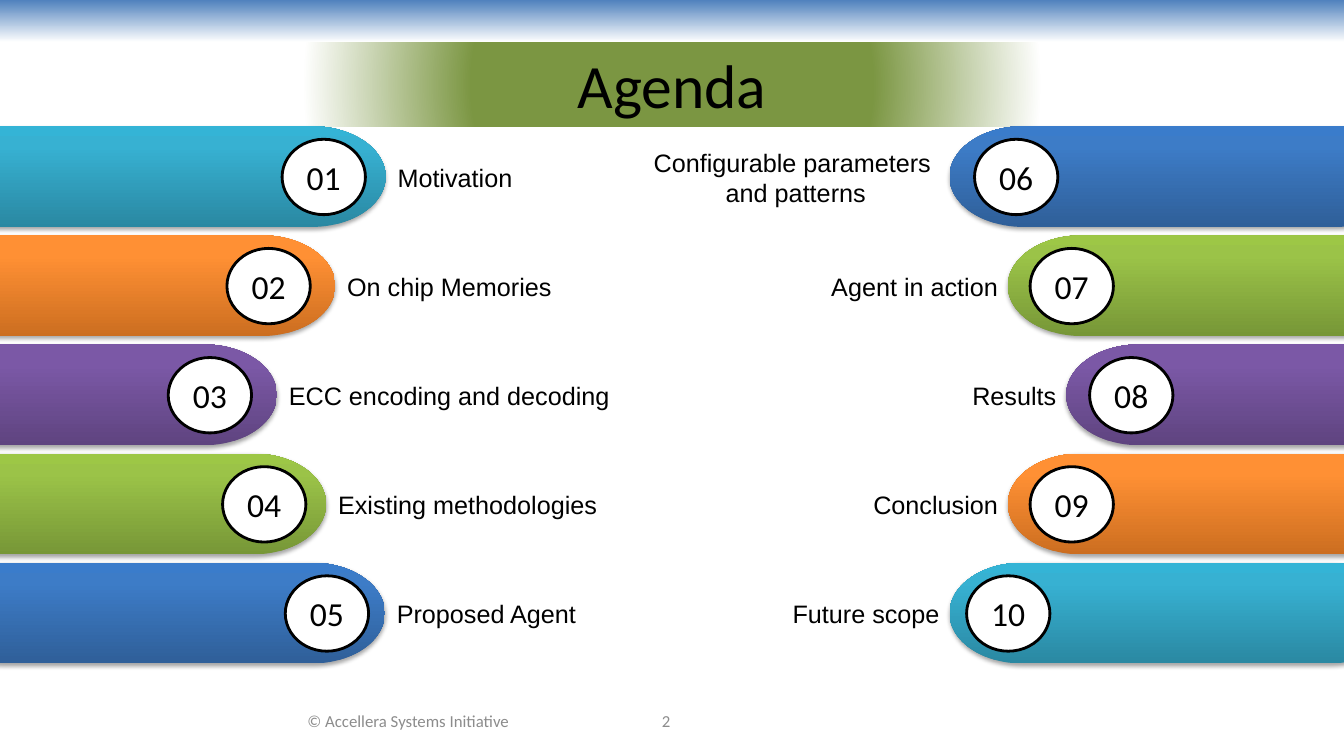
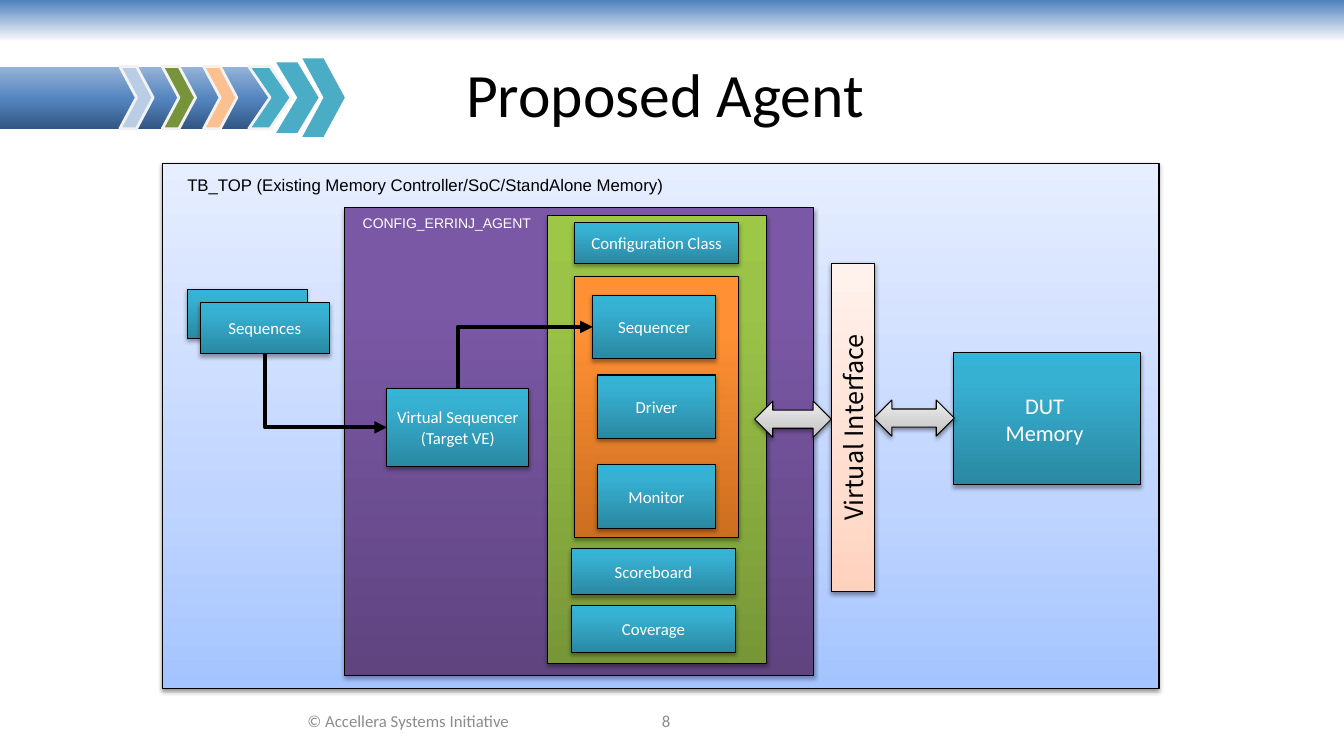
from pptx import Presentation
from pptx.dml.color import RGBColor
from pptx.enum.shapes import MSO_CONNECTOR, MSO_SHAPE
from pptx.enum.text import MSO_ANCHOR, PP_ALIGN
from pptx.oxml import parse_xml
from pptx.oxml.ns import nsdecls, qn
from pptx.util import Cm, Pt

RECTANGLE = MSO_SHAPE.RECTANGLE
TERMINATOR = MSO_SHAPE.FLOWCHART_TERMINATOR
OVAL = MSO_SHAPE.OVAL
CHEVRON = MSO_SHAPE.CHEVRON
DOUBLE_ARROW = MSO_SHAPE.LEFT_RIGHT_ARROW
ELBOW = MSO_CONNECTOR.ELBOW
LEFT, CENTER, RIGHT = PP_ALIGN.LEFT, PP_ALIGN.CENTER, PP_ALIGN.RIGHT
TOP, MIDDLE = MSO_ANCHOR.TOP, MSO_ANCHOR.MIDDLE


class Theme:
    # Plain colours
    black, white, grey = "000000", "FFFFFF", "8C8C8C"
    chevron_edge, teal = "F2F2F2", "4BACC6"
    pale_blue, olive, peach = "B9CDE5", "77933C", "FAC090"
    # Gradients: (position in percent, colour)
    band = [(0, "4F81BD"), (100, "FFFFFF")]
    title_glow = [(33, "7B9642"), (61, "FFFFFF"), (97, "FFFFFF")]
    cyan = [(0, "2A88A2"), (80, "37B1D2"), (100, "34B4D6")]
    orange = [(0, "CC6E20"), (80, "FF9034"), (100, "FF9136")]
    purple = [(0, "5F4480"), (80, "7B58A6"), (100, "7C57A8")]
    green = [(0, "779737"), (80, "9BC348"), (100, "9DC746")]
    blue = [(0, "2F5F99"), (80, "3D7CC7"), (100, "3A7CCB")]
    panel = [(0, "A4C4FF"), (35, "BFD4FF"), (100, "E6EEFF")]
    silver = [(0, "BDBDBD"), (35, "D1D1D1"), (100, "EEEEEE")]
    salmon = [(0, "FFD2BD"), (35, "FFDED0"), (100, "FFF2ED")]
    banner = [(0, "315683"), (48, "5485BF"), (100, "95B3D7")]
    # Shadows: (opacity in percent, distance in points)
    strong_shadow, soft_shadow = (35, 1.8), (38, 1.6)
    # Fonts and type sizes
    heading_font, label_font, interface_font = "Calibri", "Arial", "Noto Sans CJK KR"
    title, number, label, memory, body, small = 44, 24, 18, 16, 12, 10


def add_block(slide, kind, box, fill, line=None, line_width=0.75, shadow=None, angle=270):
    """Add a preset shape; box is in centimetres, an angle of None fills radially."""
    shape = slide.shapes.add_shape(kind, *map(Cm, box))
    properties = shape._element.spPr
    shape.fill.solid()
    if isinstance(fill, str):
        shape.fill.fore_color.rgb = RGBColor.from_string(fill)
    else:
        stops = "".join(
            f'<a:gs pos="{position * 1000}"><a:srgbClr val="{color}"/></a:gs>'
            for position, color in fill)
        if angle is None:
            direction = ('<a:path path="circle"><a:fillToRect l="50000" t="50000" '
                         'r="50000" b="50000"/></a:path>')
        else:
            direction = f'<a:lin ang="{angle * 60000}" scaled="0"/>'
        gradient = parse_xml(f'<a:gradFill {nsdecls("a")} rotWithShape="1">'
                             f'<a:gsLst>{stops}</a:gsLst>{direction}</a:gradFill>')
        properties.replace(properties.find(qn("a:solidFill")), gradient)
    if line:
        shape.line.color.rgb = RGBColor.from_string(line)
        shape.line.width = Pt(line_width)
    else:
        shape.line.fill.background()
    shape.shadow.inherit = False
    if shadow:
        opacity, distance = shadow
        properties.find(qn("a:effectLst")).append(parse_xml(
            f'<a:outerShdw {nsdecls("a")} blurRad="{Pt(3.1)}" dist="{Pt(distance)}" '
            f'dir="5400000" rotWithShape="0"><a:srgbClr val="{Theme.black}">'
            f'<a:alpha val="{opacity * 1000}"/></a:srgbClr></a:outerShdw>'))
    frame = shape.text_frame
    frame.margin_left = frame.margin_right = frame.margin_top = frame.margin_bottom = 0
    return shape


def add_text(shape, text, *, size=Theme.body, font=Theme.heading_font, color=Theme.black,
             align=CENTER, anchor=MIDDLE, wrap=True):
    frame = shape.text_frame
    frame.word_wrap = wrap
    frame.vertical_anchor = anchor
    frame.text = text
    for paragraph in frame.paragraphs:
        paragraph.alignment = align
        paragraph.font.size = Pt(size)
        paragraph.font.name = font
        paragraph.font.color.rgb = RGBColor.from_string(color)


presentation = Presentation()
presentation.slide_width, presentation.slide_height = Cm(33.87), Cm(19.05)
blank_layout = presentation.slide_layouts[6]

# Band, title and footer of both slides
pages = [
    ("Agenda", "2", (1.7, 1.07, 30.48, 2.11), Theme.title_glow),
    ("Proposed Agent ", "8", (1.7, 0.76, 30.48, 3.18), None),
]
slides = []
for title, page_number, title_box, title_fill in pages:
    slide = presentation.slides.add_slide(blank_layout)
    slides.append(slide)
    add_block(slide, RECTANGLE, (0, 0, 33.87, 1.07), Theme.band, angle=90)
    if title_fill:
        title_shape = add_block(slide, RECTANGLE, title_box, title_fill, angle=None)
    else:
        title_shape = slide.shapes.add_textbox(*map(Cm, title_box))
    add_text(title_shape, title, size=Theme.title)
    for text, left, width in [("© Accellera Systems Initiative", 6.2, 8.18),
                              (page_number, 13.54, 6.5)]:
        footer = slide.shapes.add_textbox(Cm(left), Cm(17.65), Cm(width), Cm(1.02))
        add_text(footer, text, color=Theme.grey)

agenda, agent = slides

# Agenda: bar left and width, circle left, label and label width
row_colors = [Theme.cyan, Theme.orange, Theme.purple, Theme.green, Theme.blue]
left_items = [
    (-1.88, 11.6, 7.11, "Motivation", 3.43),
    (-3.15, 11.6, 5.72, "On chip Memories", 5.72),
    (-4.42, 11.4, 4.24, "ECC encoding and decoding", 8.66),
    (-3.18, 11.4, 5.61, "Existing methodologies", 7.11),
    (-1.7, 11.4, 7.19, "Proposed Agent", 5.26),
]
right_items = [
    (23.93, 11.6, 24.56, "Configurable parameters \vand patterns", 7.75),
    (25.4, 11.6, 25.96, "Agent in action", 4.93),
    (26.87, 11.4, 27.46, "Results", 2.64),
    (25.4, 11.4, 25.96, "Conclusion", 3.68),
    (23.93, 11.4, 24.36, "Future scope", 4.24),
]
sides = [(left_items, row_colors, 1), (right_items, row_colors[::-1], 6)]
for items, colors, first_number in sides:
    for row, (bar_left, bar_width, circle_left, label, label_width) in enumerate(items):
        row_top = 3.18 + 2.75 * row
        add_block(agenda, TERMINATOR, (bar_left, row_top, bar_width, 2.54), colors[row],
                  shadow=Theme.strong_shadow)
        circle = add_block(agenda, OVAL, (circle_left, row_top + 0.33, 2.1, 1.9),
                           Theme.white, line=Theme.black, line_width=2)
        add_text(circle, f"{first_number + row:02d}", size=Theme.number)

        # Labels touch the round end of their bar
        two_lines = "\v" in label
        label_height = 1.8 if two_lines else 1.02
        if items is left_items:
            label_left, align = bar_left + bar_width + 0.05, LEFT
        else:
            label_left, align = bar_left - label_width, CENTER if two_lines else RIGHT
        label_box = agenda.shapes.add_textbox(
            Cm(label_left), Cm(row_top + 1.29 - label_height / 2),
            Cm(label_width), Cm(label_height))
        add_text(label_box, label, size=Theme.label, font=Theme.label_font,
                 align=align, wrap=False)

# Proposed agent: nested containers and their blocks, from back to front
blocks = [
    ("", (4.09, 4.11, 25.12, 13.23), Theme.panel),
    ("", (8.69, 5.23, 11.81, 11.79), Theme.purple),
    ("", (4.72, 7.29, 3.02, 1.24), Theme.cyan),
    ("Sequences", (5.05, 7.62, 3.25, 1.3), Theme.cyan),
    ("", (13.79, 5.44, 5.54, 11.28), Theme.green),
    ("Configuration Class", (14.48, 5.61, 4.14, 1.02), Theme.cyan),
    ("", (14.48, 6.96, 4.14, 6.58), Theme.orange),
    ("Sequencer", (14.94, 7.44, 3.1, 1.6), Theme.cyan),
    ("Driver", (15.06, 9.45, 2.97, 1.6), Theme.cyan),
    ("Monitor", (15.06, 11.71, 2.97, 1.6), Theme.cyan),
    ("Scoreboard", (14.4, 13.82, 4.14, 1.17), Theme.cyan),
    ("Coverage", (14.4, 15.27, 4.14, 1.17), Theme.cyan),
    ("Virtual Sequencer (Target VE)", (9.75, 9.78, 3.58, 1.98), Theme.cyan),
    ("DUT \nMemory ", (24.03, 8.89, 4.72, 3.33), Theme.cyan),
]
named_blocks = {}
for text, box, fill in blocks:
    shadow = Theme.soft_shadow if fill is Theme.panel else Theme.strong_shadow
    block = add_block(agent, RECTANGLE, box, fill, line=Theme.black, shadow=shadow)
    if text:
        size = Theme.memory if text.startswith("DUT") else Theme.body
        add_text(block, text, size=size, color=Theme.white)
        named_blocks[text.split()[0]] = block

# Container captions
captions = [
    ("CONFIG_ERRINJ_AGENT", (8.43, 5.28, 5.66, 0.69), Theme.small, Theme.white, CENTER),
    ("TB_TOP (Existing Memory Controller/SoC/StandAlone Memory)",
     (4.47, 4.29, 23.88, 0.76), Theme.body, Theme.black, LEFT),
]
for text, box, size, color, align in captions:
    caption = agent.shapes.add_textbox(*map(Cm, box))
    add_text(caption, text, size=size, font=Theme.label_font, color=color,
             align=align, anchor=TOP)

# Virtual interface and its double arrows
for box in [(19.02, 10.11, 1.93, 0.91), (22.02, 10.08, 2.03, 0.91)]:
    add_block(agent, DOUBLE_ARROW, box, Theme.silver, line=Theme.black,
              shadow=Theme.soft_shadow)
interface = add_block(agent, RECTANGLE, (20.96, 6.63, 1.09, 8.28), Theme.salmon,
                      line=Theme.black, shadow=Theme.soft_shadow)
add_text(interface, "Virtual Interface", size=Theme.label, font=Theme.interface_font)
interface.text_frame._txBody.bodyPr.set("vert", "vert270")

# Bent arrows: one vertical leg, then one horizontal leg
bent_arrows = [
    ("Sequences", 2, "Virtual", {"rot": "16200000", "flipH": "1"}),
    ("Virtual", 0, "Sequencer", {"rot": "5400000", "flipH": "1", "flipV": "1"}),
]
for source, source_side, target, turn in bent_arrows:
    connector = agent.shapes.add_connector(ELBOW, 0, 0, 0, 0)
    connector.begin_connect(named_blocks[source], source_side)
    connector.end_connect(named_blocks[target], 1)
    across = abs(connector.end_x - connector.begin_x)
    down = abs(connector.end_y - connector.begin_y)
    center_x = (connector.begin_x + connector.end_x) // 2
    center_y = (connector.begin_y + connector.end_y) // 2
    connector.left, connector.top = center_x - down // 2, center_y - across // 2
    connector.width, connector.height = down, across
    properties = connector._element.spPr
    transform = properties.find(qn("a:xfrm"))
    for flip in ("flipH", "flipV"):
        transform.attrib.pop(flip, None)
    for name, value in turn.items():
        transform.set(name, value)
    properties.find(qn("a:prstGeom")).set("prst", "bentConnector2")
    connector.line.color.rgb = RGBColor.from_string(Theme.black)
    connector.line.width = Pt(3)
    properties.find(qn("a:ln")).append(
        parse_xml(f'<a:tailEnd {nsdecls("a")} type="triangle"/>'))
    properties.append(parse_xml(f'<a:effectLst {nsdecls("a")}/>'))

# Chevron banner beside the title, centred on one line
add_block(agent, RECTANGLE, (-2.69, 1.68, 9.53, 1.57), Theme.banner)
chevrons = [
    (3.02, 0.84, 1.57, Theme.pale_blue, Theme.chevron_edge),
    (4.09, 0.84, 1.57, Theme.olive, Theme.chevron_edge),
    (5.13, 0.84, 1.57, Theme.peach, Theme.chevron_edge),
    (6.27, 1.07, 1.57, Theme.teal, Theme.chevron_edge),
    (6.96, 1.07, 1.78, Theme.teal, None),
    (7.62, 1.07, 1.98, Theme.teal, None),
]
for left, width, height, fill, line in chevrons:
    add_block(agent, CHEVRON, (left, 2.46 - height / 2, width, height), fill,
              line=line, line_width=2)

presentation.save("out.pptx")
